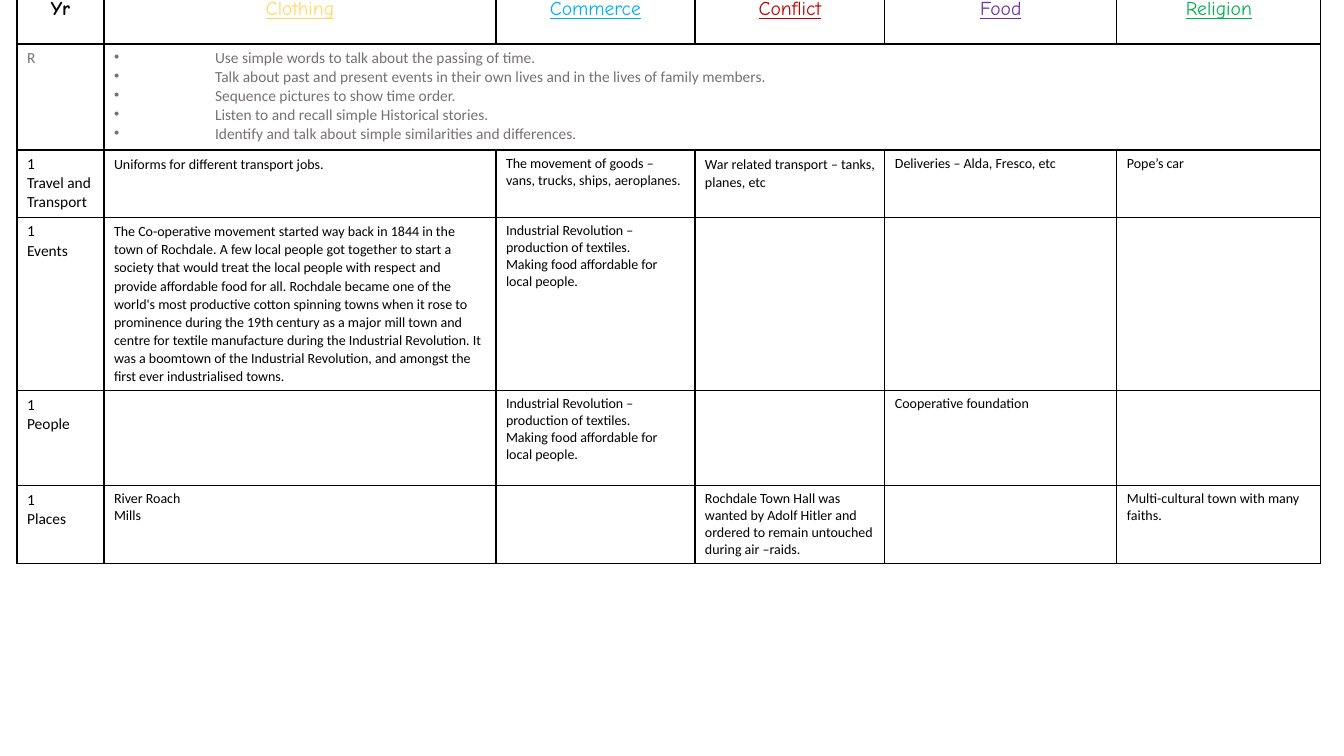
from pptx import Presentation
from pptx import util as u
from pptx.dml.color import RGBColor
from pptx.enum import text
from pptx.oxml import parse_xml
from pptx.oxml.ns import nsdecls

PX = 914400 / 100.8
COLUMN_WIDTHS = [87, 392, 199, 190, 232, 204]
ROW_HEIGHTS = [46, 106, 67, 173, 95, 78]
BLACK, GREY = "000000", "767171"

HEADINGS = [("Yr", BLACK), ("Clothing", "FFD966"), ("Commerce", "00B0F0"),
            ("Conflict", "C00000"), ("Food", "7030A0"), ("Religion", "00B050")]
RECEPTION_AIMS = [
    "Use simple words to talk about the passing of time.",
    "Talk about past and present events in their own lives and in the lives of family members.",
    "Sequence pictures to show time order.",
    "Listen to and recall simple Historical stories.",
    "Identify and talk about simple similarities and differences.",
]
ROCHDALE_STORY = (
    "The Co-operative movement started way back in 1844 in the town of Rochdale. "
    "A few local people got together to start a society that would treat the local people "
    "with respect and provide affordable food for all. Rochdale became one of the world's "
    "most productive cotton spinning towns when it rose to prominence during the 19th century "
    "as a major mill town and centre for textile manufacture during the Industrial Revolution. "
    "It was a boomtown of the Industrial Revolution, and amongst the first ever "
    "industrialised towns.")
TEXTILES = ["Industrial Revolution – production of textiles.",
            "Making food affordable for local people."]
# Year 1 topics, each with its paragraphs by theme
TOPICS = [
    ("Travel and Transport", [
        ["Uniforms for different transport jobs."],
        ["The movement of goods – vans, trucks, ships, aeroplanes."],
        ["War related transport – tanks, planes, etc"],
        ["Deliveries – Alda, Fresco, etc"],
        ["Pope’s car"]]),
    ("Events", [[ROCHDALE_STORY], TEXTILES, [], [], []]),
    ("People", [[], TEXTILES, [], ["Cooperative foundation"], []]),
    ("Places", [
        ["River Roach", "Mills"], [],
        ["Rochdale Town Hall was wanted by Adolf Hitler and ordered to remain "
         "untouched during air –raids."], [],
        ["Multi-cultural town with many faiths."]]),
]
SPACED_CELLS = {(2, 1), (2, 3), (3, 1)}


def px(length):
    return u.Emu(round(length * PX))


def colour(hex_code):
    return RGBColor.from_string(hex_code)


def write(cell, lines, size=10, hex_code=BLACK, font="Calibri", bulleted=False, spaced=False):
    frame = cell.text_frame
    for index, line in enumerate(lines):
        paragraph = frame.paragraphs[0] if index == 0 else frame.add_paragraph()
        if bulleted:
            props = paragraph._p.get_or_add_pPr()
            props.set("marL", str(px(101)))
            props.set("indent", str(px(-101)))
            props.append(parse_xml(f'<a:buChar {nsdecls("a")} char="•"/>'))
        if spaced:
            paragraph.line_spacing = 1.07
            paragraph.space_after = u.Pt(8)
        run = paragraph.add_run()
        run.text = line
        run.font.size = u.Pt(size)
        run.font.name = font
        run.font.color.rgb = colour(hex_code)


def outline(cell):
    props = cell._tc.get_or_add_tcPr()
    for side in ("lnL", "lnR", "lnT", "lnB"):
        props.append(parse_xml(
            f'<a:{side} {nsdecls("a")} w="12700"><a:solidFill>'
            f'<a:srgbClr val="{BLACK}"/></a:solidFill></a:{side}>'))
    cell.fill.background()


def add_headings(grid):
    for column, (heading, hex_code) in enumerate(HEADINGS):
        cell = grid.cell(0, column)
        cell.margin_left = cell.margin_right = px(12)
        cell.margin_top = cell.margin_bottom = 0
        write(cell, [heading], 14, hex_code, "Comic Neue")
        paragraph = cell.text_frame.paragraphs[0]
        paragraph.alignment = text.PP_ALIGN.CENTER
        font = paragraph.runs[0].font
        font.bold = column == 0
        font.underline = column > 0


def add_reception(grid):
    write(grid.cell(1, 0), ["R"], 11, GREY)
    aims = grid.cell(1, 1)
    aims.merge(grid.cell(1, len(HEADINGS) - 1))
    write(aims, RECEPTION_AIMS, 11, GREY, bulleted=True)


def add_topics(grid):
    for row, (topic, themes) in enumerate(TOPICS, start=2):
        write(grid.cell(row, 0), ["1", topic], 11)
        for column, lines in enumerate(themes, start=1):
            write(grid.cell(row, column), lines, spaced=(row, column) in SPACED_CELLS)


def add_curriculum(slide, left, top):
    grid = slide.shapes.add_table(
        len(ROW_HEIGHTS), len(COLUMN_WIDTHS), px(left), px(top),
        px(sum(COLUMN_WIDTHS)), px(sum(ROW_HEIGHTS))).table
    grid.first_row = grid.horz_banding = False
    for column, width in zip(grid.columns, COLUMN_WIDTHS):
        column.width = px(width)
    for row, height in zip(grid.rows, ROW_HEIGHTS):
        row.height = px(height)
    for cell in grid.iter_cells():
        outline(cell)
    add_headings(grid)
    add_reception(grid)
    add_topics(grid)


def main():
    deck = Presentation()
    deck.slide_width, deck.slide_height = px(1344), px(756)
    slide = deck.slides.add_slide(deck.slide_layouts[6])
    add_curriculum(slide, 17, -2)
    deck.save("out.pptx")


if __name__ == "__main__":
    main()
